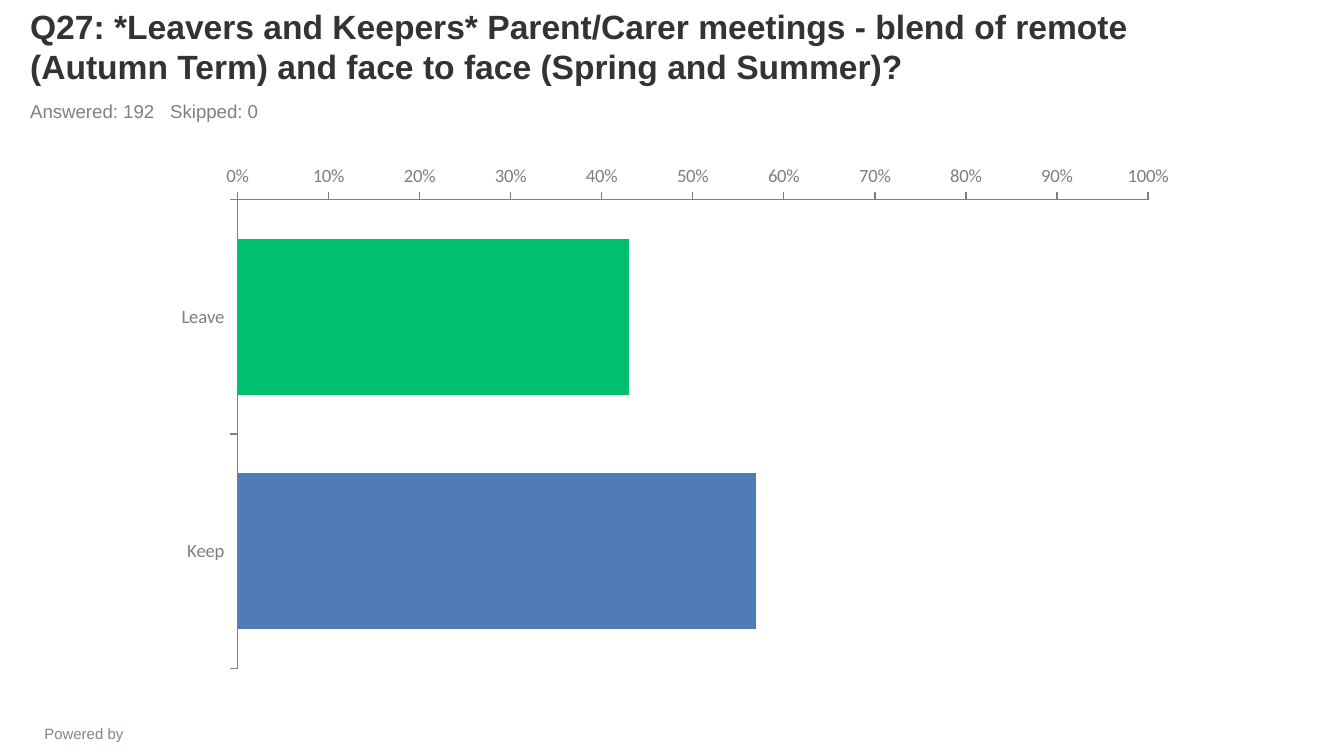
from dataclasses import dataclass

from lxml import etree
from pptx import Presentation
from pptx import util as u
from pptx.chart import data as chart_data
from pptx.dml import color
from pptx.enum import chart as charts, text
from pptx.oxml import ns

EMU_PER_PX = 914400 / 134.4
COLORS = {
    "title": "333333",
    "muted": "808080",
    "footer": "7C878E",
    "axis": "7F7F7F",
    "leave": "00BF6F",
    "keep": "507CB6",
}
ANSWERS = {"Leave": 0.43, "Keep": 0.57}


@dataclass(frozen=True)
class Label:
    wording: str
    left: int
    top: int
    width: int
    height: int
    size: int
    color: str
    bold: bool = False
    align: text.PP_ALIGN = text.PP_ALIGN.LEFT
    anchor: text.MSO_ANCHOR = text.MSO_ANCHOR.TOP
    tab: int = 0


LABELS = [
    Label("Powered by", 7, 718, 154, 24, 8, "footer", align=text.PP_ALIGN.CENTER),
    Label(
        "Q27: *Leavers and Keepers* Parent/Carer meetings - blend of remote "
        "(Autumn Term) and face to face (Spring and Summer)?",
        17, 12, 1210, 81, 18, "title", bold=True, anchor=text.MSO_ANCHOR.BOTTOM,
    ),
    Label("Answered: 192\tSkipped: 0", 17, 93, 1210, 35, 10, "muted", tab=140),
]


def px(length: int) -> u.Emu:
    return u.Emu(round(length * EMU_PER_PX))


def rgb(name: str) -> color.RGBColor:
    return color.RGBColor.from_string(COLORS[name])


def add_label(page, label: Label) -> None:
    box = page.shapes.add_textbox(
        px(label.left), px(label.top), px(label.width), px(label.height)
    )
    frame = box.text_frame
    frame.word_wrap = True
    frame.vertical_anchor = label.anchor
    para = frame.paragraphs[0]
    para.alignment = label.align
    if label.tab:
        tabs = etree.SubElement(para._p.get_or_add_pPr(), ns.qn("a:tabLst"))
        etree.SubElement(tabs, ns.qn("a:tab"), pos=str(px(label.tab)), algn="l")
    span = para.add_run()
    span.text = label.wording
    span.font.name = "Arial"
    span.font.size = u.Pt(label.size)
    span.font.bold = label.bold
    span.font.color.rgb = rgb(label.color)


def style_axis(axis) -> None:
    axis.has_major_gridlines = False
    axis.major_tick_mark = charts.XL_TICK_MARK.OUTSIDE
    axis.minor_tick_mark = charts.XL_TICK_MARK.NONE
    axis.format.line.color.rgb = rgb("axis")
    axis.format.line.width = u.Pt(0.75)
    font = axis.tick_labels.font
    font.name = "Calibri"
    font.size = u.Pt(10)
    font.color.rgb = rgb("axis")


def add_answer_chart(page) -> None:
    answers = chart_data.CategoryChartData(number_format="0%")
    answers.categories = list(ANSWERS)
    answers.add_series("Series 1", list(ANSWERS.values()))
    chart = page.shapes.add_chart(
        charts.XL_CHART_TYPE.BAR_CLUSTERED,
        px(161), px(155), px(1028), px(524), answers,
    ).chart
    chart.has_title = False
    chart.has_legend = False
    chart.font.name = "Calibri"
    chart.font.size = u.Pt(18)
    chart.font.color.rgb = rgb("title")

    plot = chart.plots[0]
    plot.gap_width = 50
    plot.overlap = 100
    plot.vary_by_categories = False
    series = plot.series[0]
    series.invert_if_negative = False
    for index, answer in enumerate(ANSWERS):
        fill = series.points[index].format.fill
        fill.solid()
        fill.fore_color.rgb = rgb(answer.lower())

    categories, values = chart.category_axis, chart.value_axis
    style_axis(categories)
    style_axis(values)
    categories.reverse_order = True
    categories.crosses = charts.XL_AXIS_CROSSES.MAXIMUM
    categories.tick_label_position = charts.XL_TICK_LABEL_POSITION.LOW
    values.minimum_scale = 0
    values.maximum_scale = 1
    values.major_unit = 0.1
    values.tick_labels.number_format = "0%"
    values.tick_labels.number_format_is_linked = False


def main() -> None:
    deck = Presentation()
    deck.slide_width = px(1344)
    deck.slide_height = px(756)
    page = deck.slides.add_slide(deck.slide_layouts[6])
    for label in LABELS:
        add_label(page, label)
    add_answer_chart(page)
    deck.save("out.pptx")


if __name__ == "__main__":
    main()
